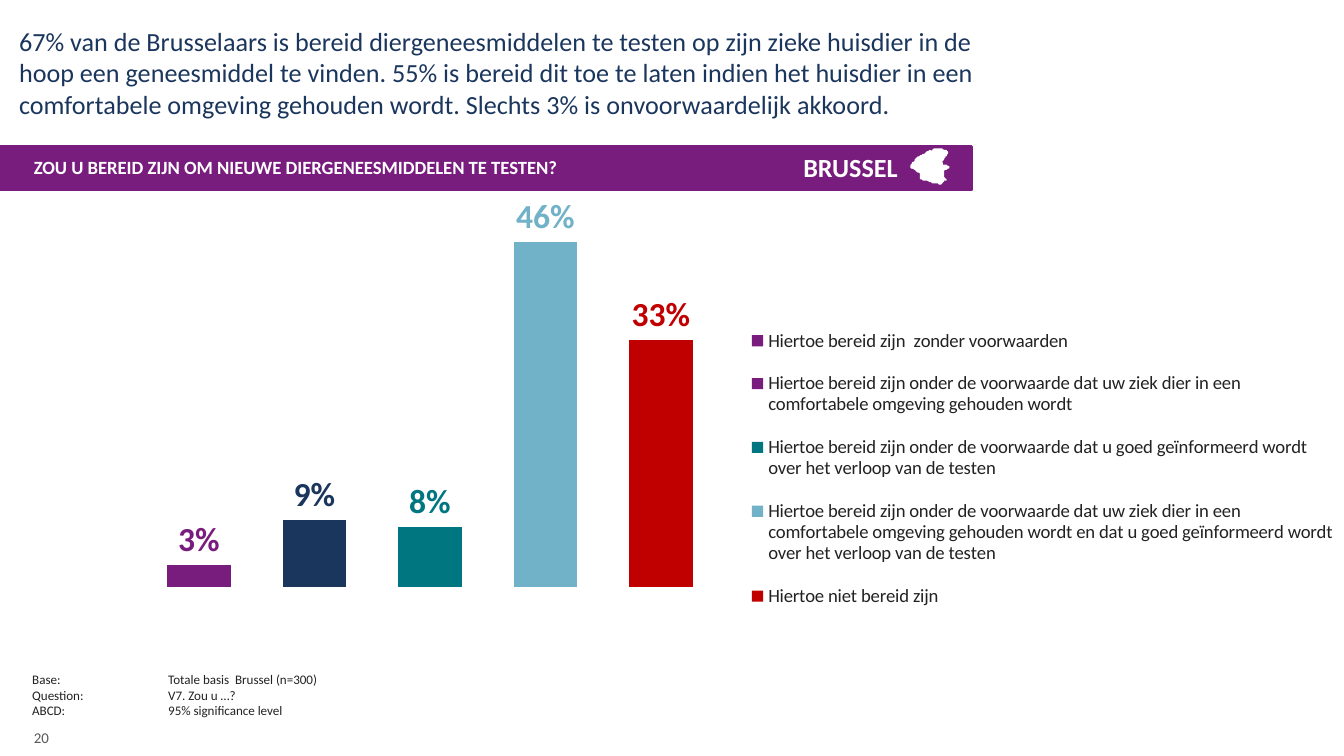
from lxml import etree
from pptx import Presentation
from pptx.chart.data import CategoryChartData
from pptx.dml.color import RGBColor
from pptx.enum.chart import XL_CHART_TYPE as ChartType, XL_LABEL_POSITION as LabelPos, XL_LEGEND_POSITION as LegendPos
from pptx.enum.shapes import MSO_SHAPE as Preset
from pptx.enum.text import MSO_ANCHOR as Anchor, MSO_AUTO_SIZE as AutoSize, PP_ALIGN as Align
from pptx.oxml import parse_xml
from pptx.oxml.ns import nsdecls, qn
from pptx.util import Cm, Pt

FONT = "Calibri"
COLORS = {
    "purple": "781D7E", "navy": "1B365D", "teal": "007681", "sky": "71B2C9",
    "red": "C00000", "ink": "222223", "gray": "58585B", "white": "FFFFFF",
}
HEADLINE = (
    "67% van de Brusselaars is bereid diergeneesmiddelen te testen op zijn zieke huisdier in de "
    "hoop een geneesmiddel te vinden. 55% is bereid dit toe te laten indien het huisdier in een "
    "comfortabele omgeving gehouden wordt. Slechts 3% is onvoorwaardelijk akkoord."
)
QUESTION = "ZOU U BEREID ZIJN OM NIEUWE DIERGENEESMIDDELEN TE TESTEN?"
REGION = "BRUSSEL"
PAGE = "20"
FOOTNOTES = [
    "Base:\tTotale basis  Brussel (n=300)",
    "Question:\tV7. Zou u …?",
    "ABCD:\t95% significance level",
]
CONDITION = "Hiertoe bereid zijn onder de voorwaarde dat "
COMFORT = "uw ziek dier in een comfortabele omgeving gehouden wordt"
INFORMED = "u goed geïnformeerd wordt over het verloop van de testen"
ANSWERS = [
    ("Hiertoe bereid zijn  zonder voorwaarden", 3, "purple", "purple"),
    (CONDITION + COMFORT, 9, "purple", "navy"),
    (CONDITION + INFORMED, 8, "teal", "teal"),
    (CONDITION + COMFORT + " en dat " + INFORMED, 46, "sky", "sky"),
    ("Hiertoe niet bereid zijn", 33, "red", "red"),
]
PLOT_AREA = {"x": 0.061, "y": 0.042, "w": 0.518, "h": 0.773}
LEGEND_AREA = {"x": 0.565, "y": 0.24, "w": 0.435, "h": 0.66}
MAP_LEFT, MAP_TOP, MAP_UNIT = 17.22, 2.82, 0.0254
MAP_OUTLINE = [
    (3, 8), (3, 9), (2, 10), (1, 10), (1, 11), (0, 12), (0, 14), (1, 14), (3, 15),
    (4, 16), (5, 17), (6, 17), (7, 18), (7, 22), (8, 22), (9, 23), (12, 23), (14, 24),
    (15, 24), (16, 25), (18, 25), (20, 25), (21, 26), (22, 26), (23, 25), (23, 24),
    (24, 24), (24, 23), (26, 23), (25, 22), (24, 21), (24, 16), (25, 15), (26, 15),
    (27, 14), (28, 14), (28, 13), (27, 13), (26, 12), (23, 12), (23, 10), (22, 10),
    (22, 9), (23, 9), (23, 8), (24, 8), (24, 7), (25, 6), (25, 5), (26, 5), (26, 4),
    (27, 3), (27, 2), (26, 2), (26, 1), (24, 1), (23, 0), (17, 0), (16, 1), (15, 2),
    (14, 1), (13, 2), (12, 2), (11, 3), (10, 4), (9, 4), (8, 5), (7, 5), (6, 6),
    (5, 6), (4, 7), (3, 8),
]


def rgb(name):
    return RGBColor.from_string(COLORS[name])


def write(shape, text, size=10, color="ink", bold=False, align=Align.LEFT,
          anchor=Anchor.TOP, inset=0, wrap=True, spacing=None, tab=None):
    frame = shape.text_frame
    frame.auto_size = AutoSize.NONE
    frame.word_wrap = wrap
    frame.vertical_anchor = anchor
    frame.margin_left = frame.margin_right = Cm(inset)
    frame.margin_top = frame.margin_bottom = Cm(inset / 2)
    frame.text = text
    for paragraph in frame.paragraphs:
        paragraph.alignment = align
        if spacing:
            paragraph.line_spacing = spacing
        if tab:
            stops = etree.SubElement(paragraph._p.get_or_add_pPr(), qn("a:tabLst"))
            etree.SubElement(stops, qn("a:tab"), pos=str(Cm(tab)), algn="l")
        for run in paragraph.runs:
            run.font.name = FONT
            run.font.size = Pt(size)
            run.font.bold = bold
            run.font.color.rgb = rgb(color)


def paint(shape, color, line_width):
    shape.shadow.inherit = False
    shape.fill.solid()
    shape.fill.fore_color.rgb = rgb(color)
    shape.line.color.rgb = rgb(color)
    shape.line.width = Pt(line_width)


def layout_xml(area, inner=False):
    target = '<c:layoutTarget val="inner"/>' if inner else ""
    modes = "".join(f'<c:{axis}Mode val="edge"/>' for axis in "xy")
    sizes = "".join(f'<c:{key} val="{value}"/>' for key, value in area.items())
    return parse_xml(f'<c:layout {nsdecls("c")}><c:manualLayout>{target}{modes}{sizes}'
                     "</c:manualLayout></c:layout>")


def place_layout(parent, layout, after=None):
    for old in parent.findall(qn("c:layout")):
        parent.remove(old)
    if after is None:
        parent.insert(0, layout)
    else:
        parent.find(qn(after)).addnext(layout)


def add_answer_chart(slide):
    data = CategoryChartData(number_format="0\\%")
    data.categories = ["1"]
    for name, value, _, _ in ANSWERS:
        data.add_series(name, [value])
    chart = slide.shapes.add_chart(ChartType.COLUMN_CLUSTERED, 0, Cm(3.63),
                                   Cm(25.4), Cm(9.17), data).chart
    chart.has_title = False
    chart.font.name = FONT
    chart.font.size = Pt(18)
    chart.font.color.rgb = rgb("ink")
    chart.value_axis.minimum_scale = 0
    chart.value_axis.maximum_scale = 50
    chart.value_axis.has_major_gridlines = False
    chart.value_axis.visible = chart.category_axis.visible = False

    plot = chart.plots[0]
    plot.gap_width = 267
    plot.overlap = -81
    plot.vary_by_categories = False
    for series, (_, _, key_color, bar_color) in zip(plot.series, ANSWERS):
        series.format.fill.solid()
        series.format.fill.fore_color.rgb = rgb(key_color)
        if bar_color != key_color:
            bar = series.points[0].format.fill
            bar.solid()
            bar.fore_color.rgb = rgb(bar_color)
        labels = series.data_labels
        labels.show_value = True
        labels.number_format = "0\\%"
        labels.number_format_is_linked = False
        labels.position = LabelPos.OUTSIDE_END
        labels.font.name = FONT
        labels.font.size = Pt(18)
        labels.font.bold = True
        labels.font.color.rgb = rgb(bar_color)

    chart.has_legend = True
    legend = chart.legend
    legend.position = LegendPos.RIGHT
    legend.include_in_layout = False
    legend.font.name = FONT
    legend.font.size = Pt(10)
    legend.font.color.rgb = rgb("ink")
    chart_xml = chart._chartSpace.chart
    place_layout(chart_xml.plotArea, layout_xml(PLOT_AREA, inner=True))
    place_layout(chart_xml.find(qn("c:legend")), layout_xml(LEGEND_AREA), "c:legendPos")


def main():
    deck = Presentation()
    deck.slide_width, deck.slide_height = Cm(25.4), Cm(14.29)
    slide = deck.slides.add_slide(deck.slide_layouts[5])
    shapes = slide.shapes

    def add_text(left, top, width, height, text, **style):
        write(shapes.add_textbox(Cm(left), Cm(top), Cm(width), Cm(height)), text, **style)

    headline = shapes.title
    headline.left, headline.top = Cm(0.36), Cm(0.48)
    headline.width, headline.height = Cm(18.62), Cm(1.75)
    write(headline, HEADLINE, size=14, color="navy")

    banner = shapes.add_shape(Preset.RECTANGLE, 0, Cm(2.77), Cm(18.36), Cm(0.81))
    paint(banner, "purple", 2)
    add_answer_chart(slide)

    outline = shapes.build_freeform(*MAP_OUTLINE[0], scale=Cm(MAP_UNIT))
    outline.add_line_segments(MAP_OUTLINE[1:], close=True)
    region_map = outline.convert_to_shape(Cm(MAP_LEFT), Cm(MAP_TOP))
    paint(region_map, "white", 0.75)

    add_text(12.6, 2.87, 4.37, 0.61, REGION, size=14, color="white", bold=True, align=Align.RIGHT)
    add_text(0.64, 3, 24, 0.51, QUESTION, color="white", bold=True, spacing=0.9)
    add_text(0.36, 12.57, 18.92, 0.89, "\n".join(FOOTNOTES), size=7, inset=0.25, tab=2.57)
    add_text(0.64, 13.46, 0.86, 0.66, PAGE, size=8, color="gray", anchor=Anchor.BOTTOM,
             wrap=False, spacing=0.85)
    deck.save("out.pptx")


if __name__ == "__main__":
    main()
